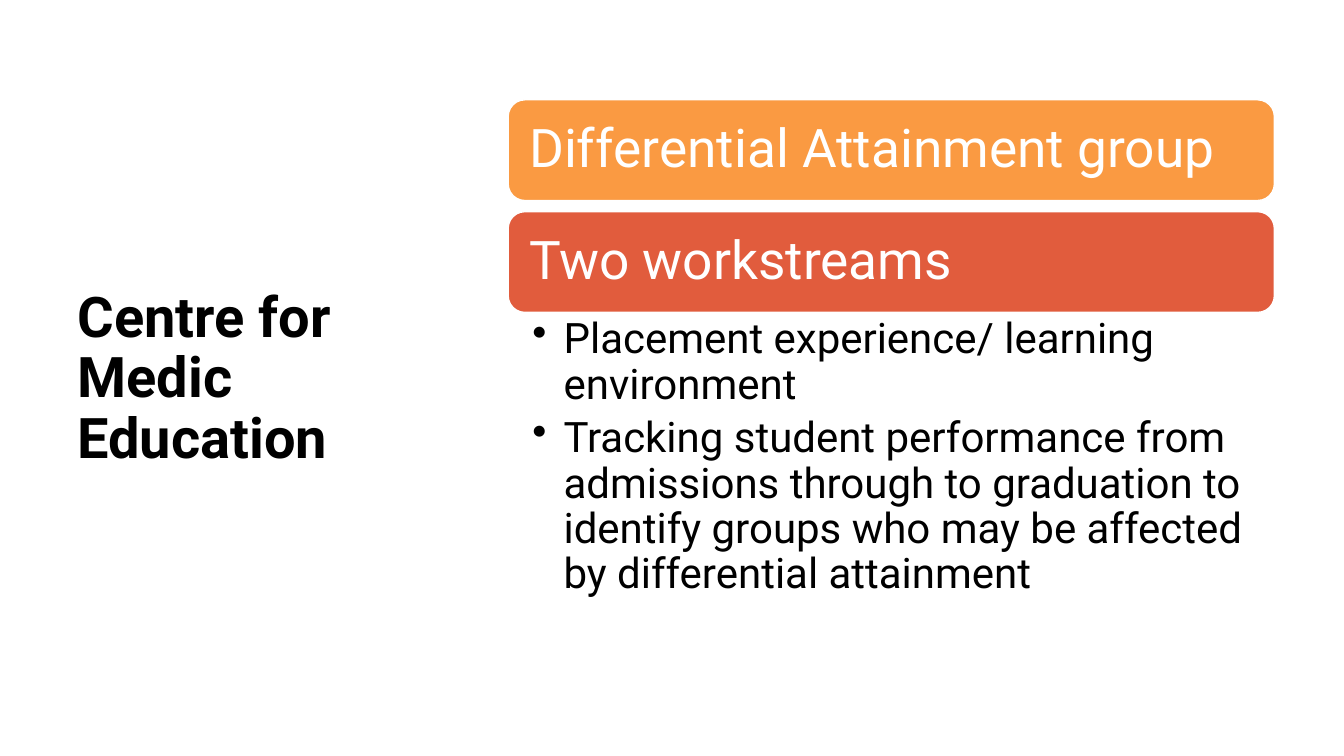
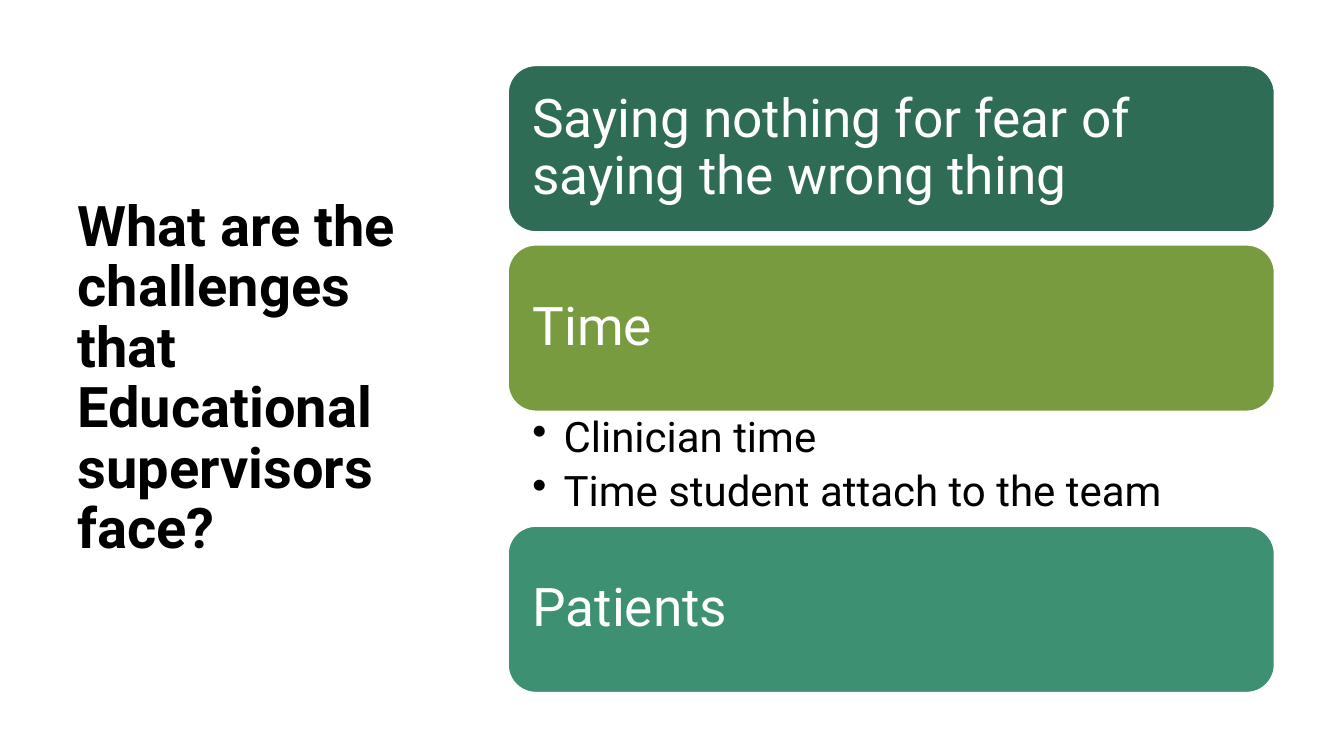
from pptx import Presentation
from pptx.dml.color import RGBColor as RGB
from pptx.enum.shapes import MSO_SHAPE as Shape
from pptx.enum.text import MSO_ANCHOR as Anchor
from pptx.oxml.ns import qn
from pptx.util import Inches, Pt
from lxml import etree

FONT = "Roboto"
COLORS = {
    "black": "000000",
    "white": "FFFFFF",
    "orange": "FA9A42",
    "red": "E15C3D",
    "pine": "2E6C56",
    "olive": "799B3F",
    "jade": "3D9072",
}
LEFT, WIDTH = 5.04, 7.6

SLIDES = [
    {
        "title": "Centre for Medic Education",
        "top": 0.99, "height": 1, "gap": 0.11,
        "bars": [
            ("Differential Attainment group", "orange", [], 0),
            ("Two workstreams", "red", [
                "Placement experience/ learning environment",
                "Tracking student performance from admissions through to "
                "graduation to identify groups who may be affected by "
                "differential attainment",
            ], 3.44),
        ],
    },
    {
        "title": "What are the challenges that Educational supervisors face?",
        "top": 0.65, "height": 1.65, "gap": 0.13,
        "bars": [
            ("Saying nothing for fear of saying the wrong thing", "pine", [], 0),
            ("Time", "olive", [
                "Clinician time",
                "Time student attach to the team",
            ], 1.14),
            ("Patients", "jade", [], 0),
        ],
    },
]


def write(shape, lines, size, color, insets, bold=False, after=0):
    frame = shape.text_frame
    frame.word_wrap = True
    frame.margin_left, frame.margin_top, frame.margin_right, frame.margin_bottom = (
        Inches(inset) for inset in insets)
    frame.text = "\n".join(lines)
    for par in frame.paragraphs:
        par.line_spacing = 0.9
        par.space_after = Pt(after)
        font = par.runs[0].font
        font.name, font.size, font.bold = FONT, Pt(size), bold
        font.color.rgb = RGB.from_string(COLORS[color])
    return frame


deck = Presentation()
deck.slide_width, deck.slide_height = Inches(13.33), Inches(7.5)

for page in SLIDES:
    slide = deck.slides.add_slide(deck.slide_layouts[6])
    title = slide.shapes.add_textbox(
        Inches(0.67), Inches(0.6), Inches(3.82), Inches(6.33))
    frame = write(title, [page["title"]], 40, "black", (0.1, 0.05, 0.1, 0.05), True)
    frame.vertical_anchor = Anchor.MIDDLE

    top, height = page["top"], page["height"]
    for label, color, points, depth in page["bars"]:
        bar = slide.shapes.add_shape(
            Shape.ROUNDED_RECTANGLE,
            Inches(LEFT), Inches(top), Inches(WIDTH), Inches(height))
        bar.shadow.inherit = False
        bar.fill.solid()
        bar.fill.fore_color.rgb = RGB.from_string(COLORS[color])
        bar.line.color.rgb = RGB.from_string(COLORS["white"])
        bar.line.width = Pt(1)
        frame = write(bar, [label], 38, "white", (0.16,) * 4)
        frame.vertical_anchor = Anchor.MIDDLE
        for par in frame.paragraphs:
            par.alignment = 1
        top += height

        if points:
            box = slide.shapes.add_textbox(
                Inches(LEFT), Inches(top), Inches(WIDTH), Inches(depth))
            frame = write(box, points, 30, "black", (0.24, 0.05, 0.3, 0.05), after=6)
            for par in frame.paragraphs:
                props = par._p.get_or_add_pPr()
                props.set("marL", str(Inches(0.31)))
                props.set("indent", str(-Inches(0.31)))
                etree.SubElement(props, qn("a:buChar")).set("char", "•")
            top += depth
        else:
            top += page["gap"]

deck.save("out.pptx")
